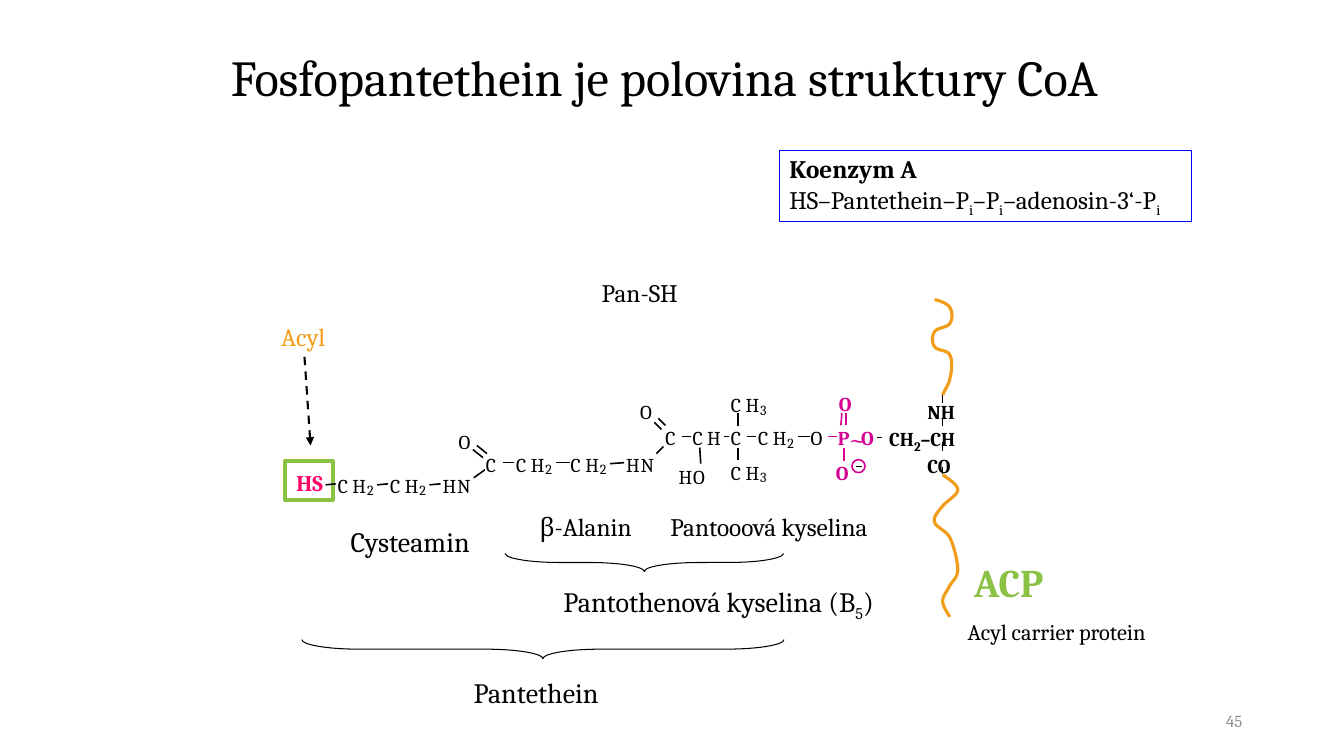
import pptx
import pptx.util
import pptx.dml.color
import pptx.enum.dml
import pptx.enum.shapes
import pptx.enum.text
import pptx.oxml
from pptx.oxml.ns import qn
from lxml import etree

Inches, Pt = pptx.util.Inches, pptx.util.Pt
SHAPE = pptx.enum.shapes.MSO_SHAPE
ALIGN = pptx.enum.text.PP_ALIGN
FONT = "Cambria"
BLACK, MAGENTA, GREEN, ORANGE = "000000", "D60093", "8BC145", "F19D19"
LETTER_WIDTH = {"C": .11, "H": .14, "O": .13, "N": .13, "P": .12,
                "2": .08, "3": .08, "HS": .28, "~": .19}


def rgb(value):
    return pptx.dml.color.RGBColor.from_string(value)


def write(sp, paragraphs, size, color=BLACK, bold=False, align=ALIGN.LEFT, wrap=False):
    """Each paragraph is a list of runs: a string, or (string, options)."""
    tf = sp.text_frame
    tf.word_wrap = wrap
    tf.auto_size = pptx.enum.text.MSO_AUTO_SIZE.SHAPE_TO_FIT_TEXT
    for i, runs in enumerate(paragraphs):
        p = tf.paragraphs[0] if i == 0 else tf.add_paragraph()
        p.alignment = align
        for run in runs:
            content, options = (run, {}) if isinstance(run, str) else run
            r = p.add_run()
            r.text = content
            r.font.name = FONT
            r.font.size = Pt(options.get("size", size))
            r.font.bold = options.get("bold", bold)
            r.font.color.rgb = rgb(color)
            if options.get("sub"):
                r._r.get_or_add_rPr().set("baseline", "-25000")
    return tf


def label(s, x, y, w, h, paragraphs, size, **style):
    sp = s.shapes.add_textbox(Inches(x), Inches(y), Inches(w), Inches(h))
    write(sp, paragraphs, size, **style)
    return sp


def outline(sp, color, width):
    sp.shadow.inherit = False
    sp.fill.background()
    sp.line.color.rgb = rgb(color)
    sp.line.width = Pt(width)


def shape(s, kind, x, y, w, h, color, width):
    sp = s.shapes.add_shape(kind, Inches(x), Inches(y), Inches(w), Inches(h))
    outline(sp, color, width)
    return sp


def line(s, x1, y1, x2, y2, color=BLACK, width=1.13):
    c = s.shapes.add_connector(pptx.enum.shapes.MSO_CONNECTOR.STRAIGHT,
                               Inches(x1), Inches(y1), Inches(x2), Inches(y2))
    c.line.color.rgb = rgb(color)
    c.line.width = Pt(width)
    etree.SubElement(c._element.spPr, qn("a:effectLst"))
    return c


def atoms(s, x, y, letters, color=BLACK, bold=False, size=14):
    """Letters of one atom group, evenly spaced, with digits lowered."""
    for i, letter in enumerate(letters):
        digit = letter.isdigit()
        pt = 10 if digit else size
        sp = label(s, x + .145 * i, y + (.08 if digit else 0), LETTER_WIDTH[letter],
                   round(pt * .017, 2), [[letter]], pt, color=color, bold=bold)
        tf = sp.text_frame
        tf.margin_left = tf.margin_top = tf.margin_right = tf.margin_bottom = 0


def curve(s, x, y, start, segments):
    """Smooth orange strand through cubic segments, eight steps each."""
    points, p0 = [], start
    for x1, y1, x2, y2, x3, y3 in segments:
        for step in range(1, 9):
            t = step / 8
            u = 1 - t
            weights = u ** 3, 3 * u * u * t, 3 * u * t * t, t ** 3
            px = sum(k * v for k, v in zip(weights, (p0[0], x1, x2, x3)))
            py = sum(k * v for k, v in zip(weights, (p0[1], y1, y2, y3)))
            points.append((Inches(x + px), Inches(y + py)))
        p0 = x3, y3
    builder = s.shapes.build_freeform(Inches(x + start[0]), Inches(y + start[1]))
    builder.add_line_segments(points, close=False)
    outline(builder.convert_to_shape(), ORANGE, 2.25)


def heading(s, x, y, w, h):
    label(s, x, y, w, h, [["Fosfopantethein je polovina struktury CoA"]], 36, align=ALIGN.CENTER)


def coenzyme_box(s, x, y, w, h):
    sub = ("i", {"sub": True})
    sp = shape(s, SHAPE.RECTANGLE, x, y, w, h, "0000FF", .75)
    write(sp, [[("Koenzym A", {"bold": True})],
               ["HS–Pantethein–P", sub, "–P", sub, "–adenosin-3‘-P", sub]], 18)


def molecule(s, x, y):
    # Carbon chain
    for letters, dx, dy in [
            ("CH2", .55, .8), ("CH2", 1.07, .8), ("HN", 1.59, .8), ("O", 1.75, .37),
            ("C", 2.02, .59), ("CH2", 2.32, .59), ("CH2", 2.86, .59), ("HN", 3.41, .59),
            ("O", 3.55, .07), ("C", 3.8, .33), ("CH", 4.07, .33), ("HO", 3.93, .71),
            ("C", 4.45, .33), ("CH3", 4.45, 0), ("CH3", 4.45, .67),
            ("CH2", 4.72, .33), ("O", 5.24, .33)]:
        atoms(s, x + dx, y + dy, letters)
    # Phosphate and thiol ends
    for letter, dx, dy in [("P", 5.51, .33), ("O", 5.52, -.01), ("O", 5.49, .67), ("O", 5.74, .33)]:
        atoms(s, x + dx, y + dy, letter, MAGENTA, True)
    atoms(s, x + 5.61, y + .3, "~", MAGENTA, size=19)
    atoms(s, x + .14, y + .75, ["HS"], "FF0066", True, 16)
    shape(s, SHAPE.OVAL, x + 5.65, y + .66, .13, .13, MAGENTA, 1.13)
    shape(s, SHAPE.RECTANGLE, x + .03, y + .67, .47, .39, GREEN, 3)
    # Bonds
    black = [
        (.53, .9, .43, .91), (1.05, .9, .94, .91), (1.57, .9, 1.46, .91),
        (2.01, .76, 1.9, .84), (2.03, .6, 1.93, .52), (1.99, .64, 1.89, .56),
        (2.3, .69, 2.19, .69), (2.85, .69, 2.71, .69), (3.39, .69, 3.25, .7),
        (3.78, .53, 3.71, .6), (3.8, .32, 3.73, .25), (3.76, .36, 3.69, .29),
        (4.05, .43, 3.96, .43), (4.15, .7, 4.14, .54), (4.38, .43, 4.43, .43),
        (4.52, .33, 4.52, .2), (4.52, .54, 4.52, .66), (4.7, .43, 4.61, .43),
        (5.23, .43, 5.11, .43), (5.69, .73, 5.75, .73), (5.9, .44, 5.95, .44)]
    phosphate = [(5.59, .32, 5.59, .2), (5.54, .32, 5.55, .2),
                 (5.57, .67, 5.57, .54), (5.5, .43, 5.41, .43)]
    for color, bonds in ((BLACK, black), (MAGENTA, phosphate)):
        for x1, y1, x2, y2 in bonds:
            line(s, x + x1, y + y1, x + x2, y + y2, color)


def acyl(s, x, y, w, h):
    sp = label(s, x, y, w, h, [["Acyl"]], 18, color=ORANGE)
    c = line(s, x + w / 2, y + h, x + .39, y + 1.28, width=1.5)
    c.begin_connect(sp, 2)
    c.line.dash_style = pptx.enum.dml.MSO_LINE.DASH
    etree.SubElement(c.line._get_or_add_ln(), qn("a:tailEnd"), type="triangle")


def part_names(s, x, y):
    label(s, x + .58, y + .15, 1.45, .44, [["Cysteamin"]], 20)
    sp = label(s, x + 2.45, y + .02, 3.59, .4, [["β-Alanin\tPantooová kyselina"]], 18)
    pPr = sp.text_frame.paragraphs[0]._p.get_or_add_pPr()
    tabs = etree.SubElement(pPr, qn("a:tabLst"))
    etree.SubElement(tabs, qn("a:tab"), pos=str(Inches(1.3)), algn="l")
    label(s, x + 2.69, y + .75, 3.45, .44,
          [["Pantothenová kyselina (B", ("5", {"sub": True}), ")"]], 20)
    label(s, x + 1.8, y + 1.65, 1.5, .44, [["Pantethein"]], 20)
    # Braces, turned to open upwards
    for dx, dy, w, h in [(3.5, -.8, .18, 2.76), (2.49, -.95, .19, 4.78)]:
        sp = shape(s, SHAPE.LEFT_BRACE, x + dx, y + dy, w, h, BLACK, .75)
        sp.adjustments[0], sp.adjustments[1] = 3.009, .5
        sp.rotation = 270


def carrier_protein(s, x, y):
    sp = label(s, x + .02, y + 1.02, .9, .81,
               [["NH"], ["CH", ("2", {"size": 16, "sub": True}), "–CH"], ["CO"]], 14, bold=True)
    for i in (0, 2):
        pPr = sp.text_frame.paragraphs[i]._p.get_or_add_pPr()
        pPr.set("marL", str(Inches(.38)))
        pPr.set("indent", "0")
    for y1, y2 in [(1.02, 1.1), (1.25, 1.33), (1.49, 1.57), (1.73, 1.8)]:
        line(s, x + .65, y + y1, x + .65, y + y2, width=.75)
    # Protein strand above and below the serine
    curve(s, x, y, (.57, .07), [
        (.63, .09, .7, .11, .72, .15), (.75, .19, .75, .27, .72, .31),
        (.7, .35, .59, .35, .57, .39), (.54, .43, .54, .5, .57, .54),
        (.59, .58, .7, .57, .72, .62), (.75, .67, .74, .79, .72, .86),
        (.71, .92, .66, .98, .65, 1.02)])
    curve(s, x, y, (.65, 1.81), [
        (.72, 1.86, .8, 1.91, .8, 1.96), (.8, 2.01, .69, 2.07, .65, 2.12),
        (.61, 2.17, .55, 2.23, .57, 2.28), (.58, 2.33, .68, 2.36, .72, 2.43),
        (.76, 2.51, .8, 2.67, .8, 2.75), (.8, 2.83, .75, 2.86, .72, 2.91),
        (.7, 2.96, .65, 3.01, .65, 3.06), (.65, 3.12, .7, 3.18, .72, 3.22)])
    label(s, x + .86, y + 2.59, .91, .57, [["ACP"]], 28, color=GREEN, bold=True)
    label(s, x + .8, y + 3.18, 2.07, .37, [["Acyl carrier protein"]], 16)


def page_number(s, x, y, w, h):
    sp = label(s, x, y, w, h, [["45"]], 12, color="8C8C8C", align=ALIGN.RIGHT, wrap=True)
    sp.text_frame.auto_size = pptx.enum.text.MSO_AUTO_SIZE.NONE
    sp.text_frame.vertical_anchor = pptx.enum.text.MSO_ANCHOR.MIDDLE


def main():
    prs = pptx.Presentation()
    prs.slide_width, prs.slide_height = Inches(13.33), Inches(7.5)
    s = prs.slides.add_slide(prs.slide_layouts[6])
    heading(s, 1.94, .41, 9.3, .71)
    coenzyme_box(s, 7.73, 1.49, 4.09, .71)
    label(s, 5.87, 2.7, 2.1, .4, [["Pan-SH"]], 18, wrap=True)
    molecule(s, 2.8, 3.9)
    acyl(s, 2.69, 3.14, .66, .4)
    part_names(s, 2.8, 5)
    carrier_protein(s, 8.7, 2.9)
    page_number(s, 9.42, 6.95, 3, .4)
    prs.save("out.pptx")


if __name__ == "__main__":
    main()
